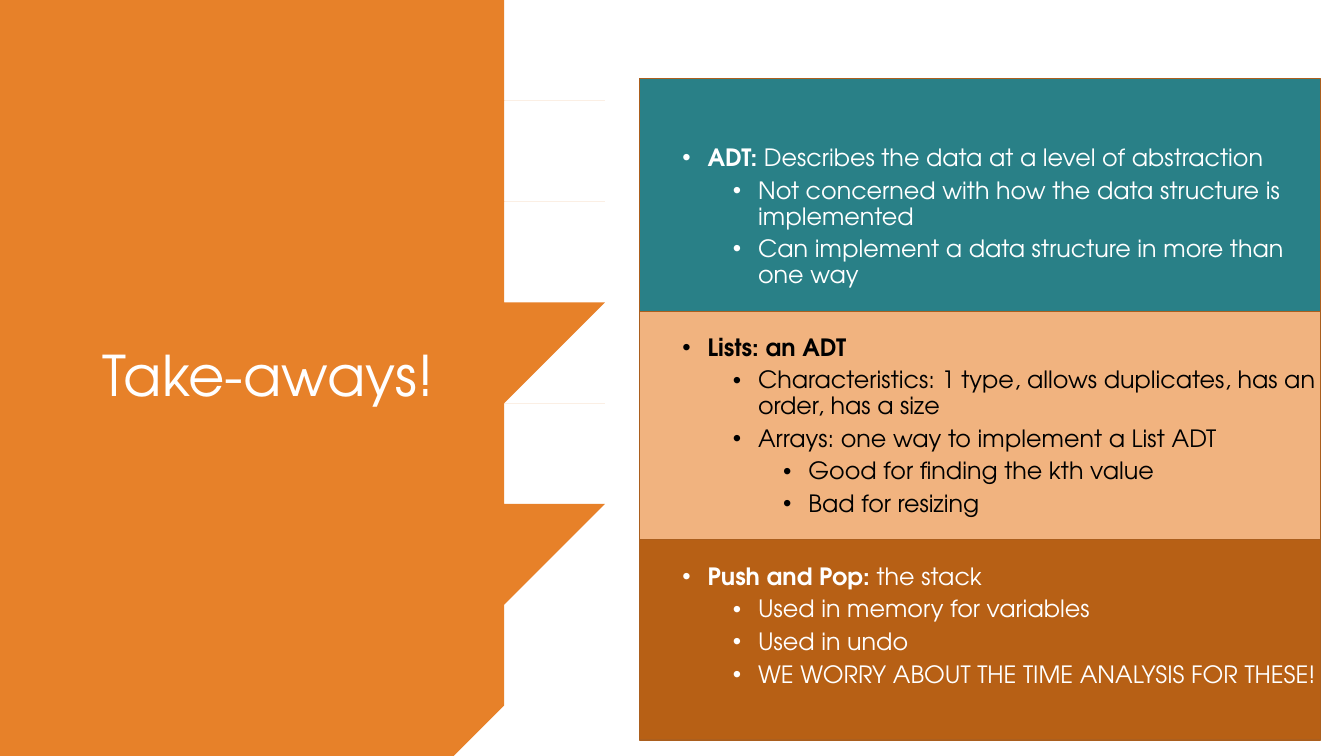
from lxml import etree
from pptx import Presentation
from pptx import util as u
from pptx.dml.color import RGBColor
from pptx.enum import shapes, text
from pptx.oxml import ns

FONT = "TeX Gyre Adventor"
ORANGE = RGBColor(0xE7, 0x81, 0x29)
TEAL = RGBColor(0x29, 0x80, 0x87)
PEACH = RGBColor(0xF1, 0xB3, 0x7F)
RUST = RGBColor(0xB7, 0x60, 0x15)
EDGE = RGBColor(0xAB, 0x5F, 0x1E)
WHITE = RGBColor(0xFF, 0xFF, 0xFF)
BLACK = RGBColor(0, 0, 0)

# Ragged right edge of the brush stroke, from top to bottom.
BRUSH_EDGE = [
    (4.92, 0), (4.59, 0.12), (4.93, 0.08), (4.96, 0.18), (4.75, 0.24), (4.64, 0.41),
    (4.93, 0.39), (5, 0.49), (5.16, 0.37), (5.16, 0.53), (4.94, 0.61), (5.13, 0.61),
    (5.3, 0.56), (5.58, 0.58), (6.02, 0.51), (5.3, 0.83), (5.04, 1), (5.15, 1.04),
    (4.84, 1.22), (4.78, 1.33), (4.93, 1.35), (4.9, 1.49), (4.53, 1.68), (4.5, 1.77),
    (4.66, 1.81), (4.5, 2.02), (4.33, 2.17), (4.37, 2.3), (4.73, 2.27), (4.35, 2.42),
    (4.85, 2.33), (5.57, 2.07), (5.06, 2.4), (4.9, 2.62), (4.64, 2.63), (4.51, 2.75),
    (4.57, 2.8), (4.79, 2.76), (4.85, 2.85), (5.12, 2.77), (5.32, 2.79), (5.4, 2.96),
    (5.5, 3.16), (5.85, 3.22), (5.6, 3.44), (5.26, 3.64), (5.66, 3.53), (5.71, 3.71),
    (5.5, 3.92), (5.46, 4.19), (5.49, 4.55), (5.65, 4.57), (5.69, 4.82), (6, 4.79),
    (5.67, 5.05), (6, 5), (6, 5.11), (5.78, 5.26), (5.38, 5.64), (5.77, 5.46),
    (5.36, 5.85), (5.24, 6.14), (5.09, 6.33), (5.31, 6.29), (5.03, 6.57), (4.75, 6.78),
    (5.23, 6.62), (5.32, 6.67), (5.06, 6.87), (4.87, 6.97), (4.83, 7.18), (4.68, 7.28),
    (4.29, 7.5),
]

BANDS = [(TEAL, 2.31), (PEACH, 2.26), (RUST, 1.99)]

# Each topic: text colour, bold lead, rest of the lead line, (level, text) points.
TOPICS = [
    (WHITE, "ADT: ", "Describes the data at a level of abstraction", [
        (1, "Not concerned with how the data structure is implemented"),
        (1, "Can implement a data structure in more than one way")]),
    (BLACK, "Lists: an ADT", "", [
        (1, "Characteristics: 1 type, allows duplicates, has an order, has a size"),
        (1, "Arrays: one way to implement a List ADT"),
        (2, "Good for finding the kth value"),
        (2, "Bad for resizing")]),
    (WHITE, "Push and Pop: ", "the stack", [
        (1, "Used in memory for variables"),
        (1, "Used in undo"),
        (1, "WE WORRY ABOUT THE TIME ANALYSIS FOR THESE!")]),
]


def add_span(para, words, size=17, color=WHITE, bold=False):
    span = para.add_run()
    span.text = words
    span.font.name = FONT
    span.font.size = u.Pt(size)
    span.font.bold = bold
    span.font.color.rgb = color


def format_bullet(para, level, space_before):
    para.level = level
    para.line_spacing = 0.9
    para.space_before = u.Pt(space_before)
    props = para._p.get_or_add_pPr()
    props.set("marL", str(u.Inches(0.25 + 0.5 * level)))
    props.set("indent", str(u.Inches(-0.25)))
    etree.SubElement(props, ns.qn("a:buFont")).set("typeface", "Arial")
    etree.SubElement(props, ns.qn("a:buChar")).set("char", "•")


class TakeawayPage:
    def __init__(self, deck):
        self.page = deck.slides.add_slide(deck.slide_layouts[5])

    def paint(self, shape, color):
        shape.shadow.inherit = False
        shape.fill.solid()
        shape.fill.fore_color.rgb = color

    def brush(self, points, color):
        pen = self.page.shapes.build_freeform(0, 0, scale=u.Inches(1))
        pen.add_line_segments(points, close=True)
        shape = pen.convert_to_shape()
        self.paint(shape, color)
        shape.line.fill.background()

    def band(self, left, top, width, height, color):
        shape = self.page.shapes.add_shape(
            shapes.MSO_SHAPE.RECTANGLE, *map(u.Inches, (left, top, width, height)))
        self.paint(shape, color)
        shape.line.color.rgb = EDGE
        shape.line.width = u.Pt(1)

    def frame(self, box):
        box.text_frame.word_wrap = True
        box.text_frame.auto_size = text.MSO_AUTO_SIZE.NONE
        box.text_frame.vertical_anchor = text.MSO_ANCHOR.MIDDLE
        return box.text_frame

    def title(self, words, left, top, width, height):
        box = self.page.shapes.title
        box.left, box.top, box.width, box.height = map(u.Inches, (left, top, width, height))
        box.element.getparent().append(box.element)  # in front of the brush
        para = self.frame(box).paragraphs[0]
        para.alignment = text.PP_ALIGN.LEFT
        para.line_spacing = 0.9
        add_span(para, words, size=40)

    def outline(self, topics, left, top, width, height):
        box = self.page.shapes.add_textbox(*map(u.Inches, (left, top, width, height)))
        frame = self.frame(box)
        for number, (color, lead, rest, points) in enumerate(topics):
            para = frame.add_paragraph() if number else frame.paragraphs[0]
            format_bullet(para, 0, 33.5 if number else 10)
            add_span(para, lead, color=color, bold=True)
            if rest:
                add_span(para, rest, color=color)
            for level, words in points:
                para = frame.add_paragraph()
                format_bullet(para, level, 5)
                add_span(para, words, color=color)


def main():
    deck = Presentation()
    deck.slide_width, deck.slide_height = u.Inches(13.33), u.Inches(7.5)
    takeaways = TakeawayPage(deck)
    takeaways.brush(BRUSH_EDGE + [(0, 7.5)], ORANGE)
    takeaways.title("Take-aways!", 0.92, 0.78, 3.79, 5.94)
    top = 0.78
    for color, height in BANDS:
        takeaways.band(6.34, top, 6.76, height, color)
        top += height
    takeaways.outline(TOPICS, 6.67, 0.78, 6.57, 6.72)
    deck.save("out.pptx")


if __name__ == "__main__":
    main()
